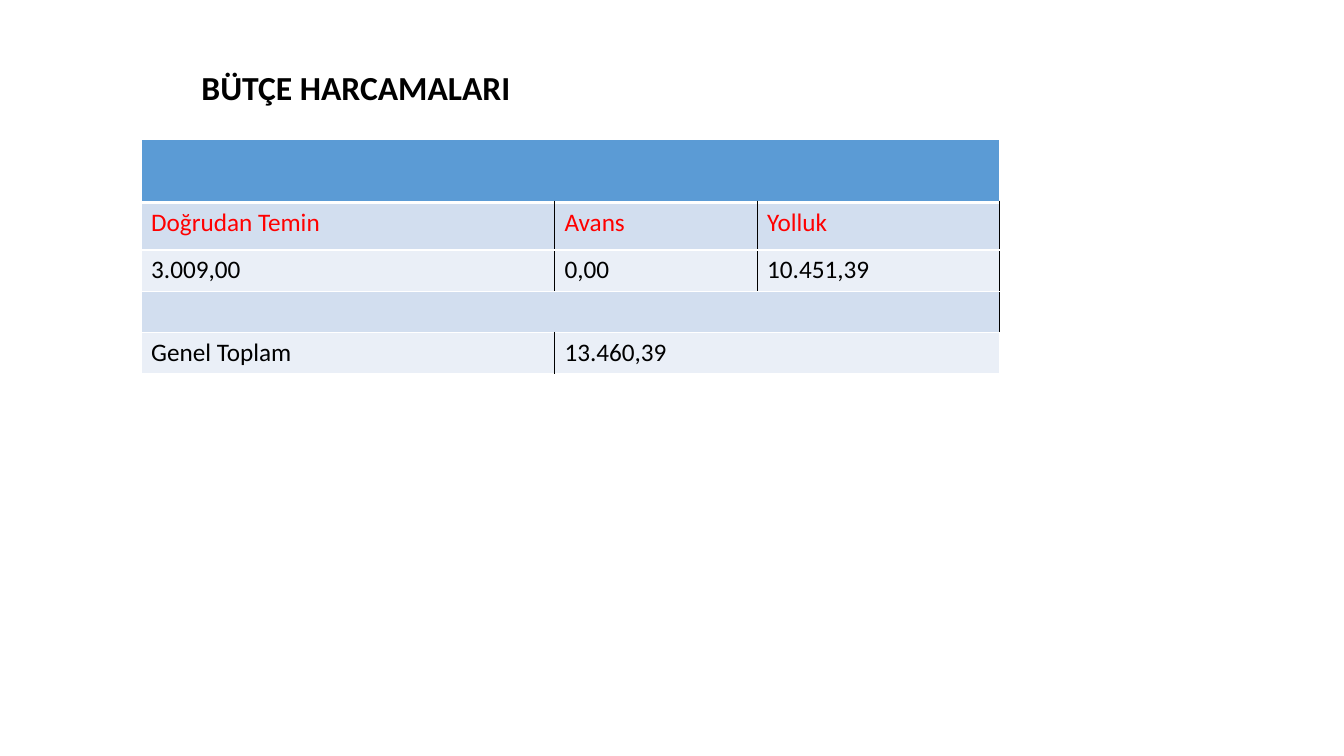
from lxml.etree import SubElement
from pptx import Presentation
from pptx.dml.color import RGBColor
from pptx.enum.text import MSO_ANCHOR
from pptx.oxml.ns import qn
from pptx.util import Inches, Pt

BLACK = RGBColor(0x00, 0x00, 0x00)
WHITE = RGBColor(0xFF, 0xFF, 0xFF)
RED = RGBColor(0xFF, 0x00, 0x00)
BLUE = RGBColor(0x5B, 0x9B, 0xD5)
PALE = RGBColor(0xD2, 0xDE, 0xEF)
PALER = RGBColor(0xEA, 0xEF, 0xF7)
FONT = "Calibri"

# Content: each row lists (text, columns spanned)
TITLE = "BÜTÇE HARCAMALARI"
ROWS = [
    [("", 3)],
    [("Doğrudan Temin", 1), ("Avans", 1), ("Yolluk", 1)],
    [("3.009,00", 1), ("0,00", 1), ("10.451,39", 1)],
    [("", 3)],
    [("Genel Toplam", 1), ("13.460,39", 2)],
]
ROW_FILLS = [BLUE, PALE, PALER, PALE, PALER]
COLUMN_WIDTHS = [4.1, 2.01, 2.4]
ROW_HEIGHTS = [0.63, 0.47, 0.41, 0.41, 0.41]
HEADER, LABELS, TOTAL = 0, 1, len(ROWS) - 1


def set_border(cell, side, color, width=1):
    properties = cell._tc.get_or_add_tcPr()
    line = SubElement(properties, qn(f"a:ln{side}"), w=str(Pt(width)))
    fill = SubElement(line, qn("a:solidFill"))
    SubElement(fill, qn("a:srgbClr"), val=str(color))


def set_font(para, size, color, bold=False):
    para.font.name = FONT
    para.font.size = Pt(size)
    para.font.color.rgb = color
    para.font.bold = bold


deck = Presentation()
deck.slide_width, deck.slide_height = Inches(13.33), Inches(7.5)
page = deck.slides.add_slide(deck.slide_layouts[6])

# Title
box = page.shapes.add_textbox(Inches(1.9), Inches(0.4), Inches(10.52), Inches(0.98))
box.text_frame.word_wrap = True
box.text_frame.vertical_anchor = MSO_ANCHOR.MIDDLE
para = box.text_frame.paragraphs[0]
para.text = TITLE
para.line_spacing = 0.9
set_font(para, 24, BLACK, bold=True)

# Table grid
table = page.shapes.add_table(
    len(ROWS), len(COLUMN_WIDTHS), Inches(1.4), Inches(1.38),
    Inches(sum(COLUMN_WIDTHS)), Inches(sum(ROW_HEIGHTS))).table
for column, width in zip(table.columns, COLUMN_WIDTHS):
    column.width = Inches(width)
for row, height in zip(table.rows, ROW_HEIGHTS):
    row.height = Inches(height)

# Cells: upright rules are black, except around the header and at the outer
# left edge and the right end of the total
for r, entries in enumerate(ROWS):
    c = 0
    for text, span in entries:
        cell = table.cell(r, c)
        end = c + span
        if span > 1:
            cell.merge(table.cell(r, end - 1))
        at_right = end == len(COLUMN_WIDTHS)
        white_right = r == HEADER or (r == TOTAL and at_right)
        set_border(cell, "L", BLACK if c else WHITE)
        set_border(cell, "R", WHITE if white_right else BLACK)
        set_border(cell, "T", WHITE, 3 if r == HEADER + 1 else 1)
        set_border(cell, "B", WHITE, 3 if r == HEADER else 1)
        cell.fill.solid()
        cell.fill.fore_color.rgb = ROW_FILLS[r]
        para = cell.text_frame.paragraphs[0]
        para.text = text
        set_font(para, 18, RED if r == LABELS else BLACK)
        c = end

deck.save("out.pptx")
